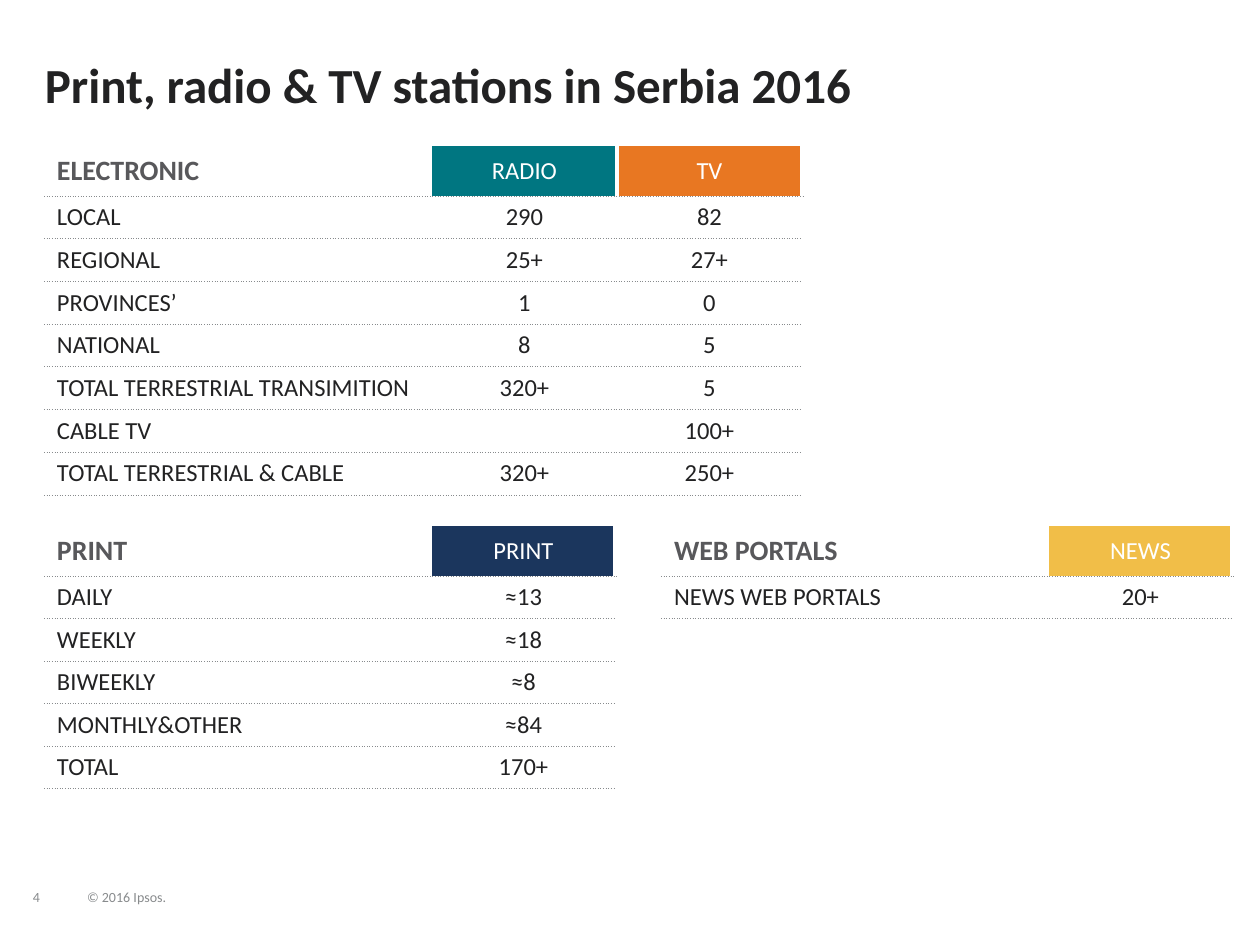
import lxml.etree
import pptx
import pptx.dml.color
import pptx.enum.text
import pptx.oxml.ns
import pptx.util

PX = pptx.util.Inches(1) / 126
FONT = "Calibri"
HEADER_HEIGHT = 50
COLORS = {
    "text": "222223", "heading": "58585B", "gray": "888B8D", "white": "FFFFFF",
    "teal": "007681", "orange": "E87722", "navy": "1B365D", "yellow": "F1BE48",
}
ALIGN = pptx.enum.text.PP_ALIGN
ANCHOR = pptx.enum.text.MSO_ANCHOR
TITLE = {"size": 28, "bold": True, "color": "text"}
FOOTER = {"size": 8, "bold": False, "color": "gray"}
HEADING = {"size": 16, "bold": True, "color": "heading"}
COLUMN_HEAD = {"size": 14, "bold": False, "color": "white"}
BODY = {"size": 14, "bold": False, "color": "text"}


def px(length):
    return pptx.util.Emu(round(length * PX))


def rgb(name):
    return pptx.dml.color.RGBColor.from_string(COLORS[name])


def set_attributes(target, values):
    for name, value in values.items():
        setattr(target, name, value)


def add_element(parent, tag, **attributes):
    return lxml.etree.SubElement(parent, pptx.oxml.ns.qn(tag), attributes)


def write_text(paragraph, text, style):
    if not text:
        # Keeps an empty cell from growing to the default text size.
        add_element(paragraph._p, "a:endParaRPr", sz=str(style["size"] * 100))
        return
    run = paragraph.add_run()
    run.text = text
    set_attributes(run.font, {
        "name": FONT, "size": pptx.util.Pt(style["size"]), "bold": style["bold"],
    })
    run.font.color.rgb = rgb(style["color"])


def add_text(slide, box, text, style, spacing, anchor, insets=(0, 0)):
    shape = slide.shapes.add_textbox(*map(px, box))
    across, down = map(px, insets)
    set_attributes(shape.text_frame, {
        "word_wrap": True, "vertical_anchor": anchor,
        "margin_left": across, "margin_right": across,
        "margin_top": down, "margin_bottom": down,
    })
    paragraph = shape.text_frame.paragraphs[0]
    paragraph.line_spacing = spacing
    write_text(paragraph, text, style)


def set_borders(cell, borders):
    """Draw (color, points, dash) for each side; a side given None has no line."""
    properties = cell._tc.get_or_add_tcPr()
    for index, side in enumerate(("L", "R", "T", "B")):
        border = borders.get(side)
        line = add_element(properties, f"a:ln{side}")
        properties.insert(index, line)
        if border is None:
            add_element(line, "a:noFill")
            continue
        color, points, dash = border
        line.set("w", str(pptx.util.Pt(points)))
        add_element(add_element(line, "a:solidFill"), "a:srgbClr", val=COLORS[color])
        add_element(line, "a:prstDash", val=dash)


def format_cell(cell, text, is_header, is_label, fill):
    left, right, down = (13, 13, 8) if is_header else (13 if is_label else 5, 5, 6)
    set_attributes(cell, {
        "margin_left": px(left), "margin_right": px(right),
        "margin_top": px(down), "margin_bottom": px(down),
        "vertical_anchor": ANCHOR.MIDDLE,
    })
    paragraph = cell.text_frame.paragraphs[0]
    paragraph.alignment = ALIGN.LEFT if is_label else ALIGN.CENTER
    header_style = HEADING if is_label else COLUMN_HEAD
    write_text(paragraph, text, header_style if is_header else BODY)

    dotted = ("gray", 0.5, "sysDot")
    borders = {"B": dotted}
    if not is_header:
        borders["T"] = dotted
    if fill:
        cell.fill.solid()
        cell.fill.fore_color.rgb = rgb(fill)
        borders["R"] = ("white", 3, "solid")
        if fill == "orange":
            borders["L"] = borders["R"]
    else:
        cell.fill.background()
    set_borders(cell, borders)


def add_media_table(slide, box, column_widths, fills, rows):
    """Place a table whose first row holds the heading and the filled column heads."""
    left, top, height = box
    table = slide.shapes.add_table(
        len(rows), len(column_widths),
        px(left), px(top), px(sum(column_widths)), px(height),
    ).table
    set_attributes(table, {"first_row": False, "horz_banding": False})
    for column, width in zip(table.columns, column_widths):
        column.width = px(width)
    body_height = (height - HEADER_HEIGHT) / (len(rows) - 1)
    for row_index, values in enumerate(rows):
        is_header = row_index == 0
        table.rows[row_index].height = px(HEADER_HEIGHT if is_header else body_height)
        for column_index, text in enumerate(values):
            is_label = column_index == 0
            fill = fills[column_index - 1] if is_header and not is_label else None
            format_cell(table.cell(row_index, column_index), text, is_header, is_label, fill)


def add_footer(slide, left, bottom):
    add_text(slide, (left, bottom - 44, 43, 44), "4", FOOTER, 0.85, ANCHOR.BOTTOM)
    add_text(slide, (left + 54, bottom - 32, 96, 32), "© 2016 Ipsos.", FOOTER, 0.85, ANCHOR.BOTTOM)


def main():
    presentation = pptx.Presentation()
    presentation.slide_width = px(1260)
    presentation.slide_height = px(945)
    slide = presentation.slides.add_slide(presentation.slide_layouts[6])

    add_footer(slide, 33, 905)
    add_text(slide, (32, 55, 1121, 67), "Print, radio & TV stations in Serbia 2016",
             TITLE, 0.9, ANCHOR.TOP, (13, 6))
    add_media_table(slide, (44, 146, 349), (388, 185, 185), ("teal", "orange"), [
        ("ELECTRONIC", "RADIO", "TV"),
        ("LOCAL", "290", "82"),
        ("REGIONAL", "25+", "27+"),
        ("PROVINCES’", "1", "0"),
        ("NATIONAL", "8", "5"),
        ("TOTAL TERRESTRIAL TRANSIMITION", "320+", "5"),
        ("CABLE TV", "", "100+"),
        ("TOTAL TERRESTRIAL & CABLE", "320+", "250+"),
    ])
    add_media_table(slide, (44, 526, 263), (388, 183), ("navy",), [
        ("PRINT", "PRINT"),
        ("DAILY", "≈13"),
        ("WEEKLY", "≈18"),
        ("BIWEEKLY", "≈8"),
        ("MONTHLY&OTHER", "≈84"),
        ("TOTAL", "170+"),
    ])
    add_media_table(slide, (661, 526, 93), (388, 183), ("yellow",), [
        ("WEB PORTALS", "NEWS"),
        ("NEWS WEB PORTALS", "20+"),
    ])
    presentation.save("out.pptx")


if __name__ == "__main__":
    main()
